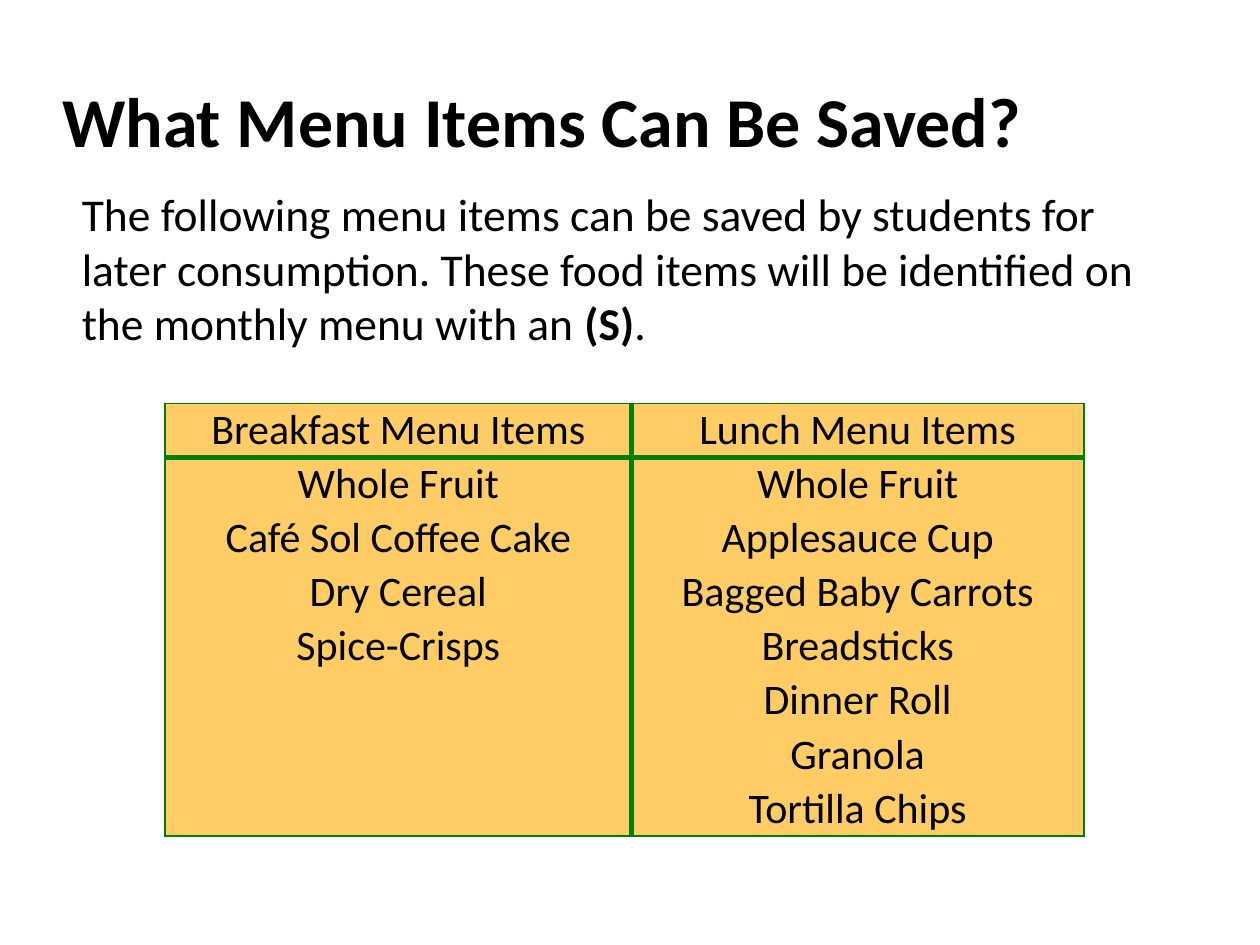
from itertools import zip_longest

from lxml import etree
from pptx import Presentation
from pptx.dml.color import RGBColor
from pptx.enum import text
from pptx.oxml import ns
from pptx import util as u

BLACK = RGBColor(0x00, 0x00, 0x00)
GREEN = RGBColor(0x00, 0x80, 0x00)
APRICOT = RGBColor(0xFF, 0xCC, 0x66)
THIN, THICK = 1, 3

BREAKFAST = ["Breakfast Menu Items", "Whole Fruit", "Café Sol Coffee Cake",
             "Dry Cereal", "Spice-Crisps"]
LUNCH = ["Lunch Menu Items", "Whole Fruit", "Applesauce Cup",
         "Bagged Baby Carrots", "Breadsticks", "Dinner Roll", "Granola",
         "Tortilla Chips"]


class MenuSlide:
    font_name = "Calibri"

    def __init__(self, slide):
        self.slide = slide

    def style(self, paragraph, size, align, bold=False):
        paragraph.alignment = align
        for run in paragraph.runs:
            run.font.name = self.font_name
            run.font.size = u.Pt(size)
            run.font.bold = bold
            run.font.color.rgb = BLACK

    def title(self, wording, left, top, width, height):
        heading = self.slide.shapes.title
        heading.left, heading.top = u.Cm(left), u.Cm(top)
        heading.width, heading.height = u.Cm(width), u.Cm(height)
        frame = heading.text_frame
        frame.text = wording
        frame.vertical_anchor = text.MSO_ANCHOR.MIDDLE
        self.style(frame.paragraphs[0], 40, text.PP_ALIGN.LEFT, bold=True)

    def intro(self, parts, bold_part, left, top, width, height):
        box = self.slide.shapes.add_textbox(
            u.Cm(left), u.Cm(top), u.Cm(width), u.Cm(height))
        frame = box.text_frame
        frame.word_wrap = True
        frame.auto_size = text.MSO_AUTO_SIZE.SHAPE_TO_FIT_TEXT
        paragraph = frame.paragraphs[0]
        for part in parts:
            paragraph.add_run().text = part
        self.style(paragraph, 26, text.PP_ALIGN.LEFT)
        paragraph.runs[bold_part].font.bold = True

    def border(self, cell, side, weight):
        """Draw one cell edge; a weight of 0 leaves it invisible."""
        line = etree.SubElement(cell._tc.get_or_add_tcPr(), ns.qn(f"a:ln{side}"))
        line.set("w", str(u.Pt(weight)))
        if weight:
            fill = etree.SubElement(line, ns.qn("a:solidFill"))
            etree.SubElement(fill, ns.qn("a:srgbClr")).set("val", str(GREEN))
        else:
            etree.SubElement(line, ns.qn("a:noFill"))

    def menu_table(self, rows, left, top, widths, row_height):
        table = self.slide.shapes.add_table(
            len(rows), len(widths), u.Cm(left), u.Cm(top),
            u.Cm(sum(widths)), u.Cm(row_height * len(rows))).table
        table.first_row = table.horz_banding = False
        for column, width in zip(table.columns, widths):
            column.width = u.Cm(width)
        # Outer frame thin, header and column dividers thick
        row_lines = [THIN, THICK] + [0] * (len(rows) - 2) + [THIN]
        column_lines = [THIN, THICK, THIN]
        for r, items in enumerate(rows):
            for c, item in enumerate(items):
                cell = table.cell(r, c)
                edges = {"L": column_lines[c], "R": column_lines[c + 1],
                         "T": row_lines[r], "B": row_lines[r + 1]}
                for side, weight in edges.items():
                    self.border(cell, side, weight)
                cell.fill.solid()
                cell.fill.fore_color.rgb = APRICOT
                cell.margin_left = cell.margin_right = 0
                cell.margin_top = cell.margin_bottom = 0
                cell.vertical_anchor = text.MSO_ANCHOR.MIDDLE
                if item:
                    cell.text_frame.text = item
                    self.style(cell.text_frame.paragraphs[0], 24,
                               text.PP_ALIGN.CENTER)


def main():
    deck = Presentation()
    deck.slide_width, deck.slide_height = u.Cm(25.4), u.Cm(19.05)
    title_only = deck.slide_layouts[5]
    menu = MenuSlide(deck.slides.add_slide(title_only))

    # Heading and explanation
    menu.title("What Menu Items Can Be Saved?", 1, 0.81, 22.86, 3.18)
    menu.intro(["The following menu items can be saved by students for later "
                "consumption. These food items will be identified on the "
                "monthly menu with an ", "(S)", "."],
               1, 1.4, 3.63, 22.2, 3.58)

    # Breakfast and lunch side by side
    menu.menu_table(list(zip_longest(BREAKFAST, LUNCH)),
                    3.33, 8.13, [9.4, 9.12], 1.09)
    deck.save("out.pptx")


if __name__ == "__main__":
    main()
